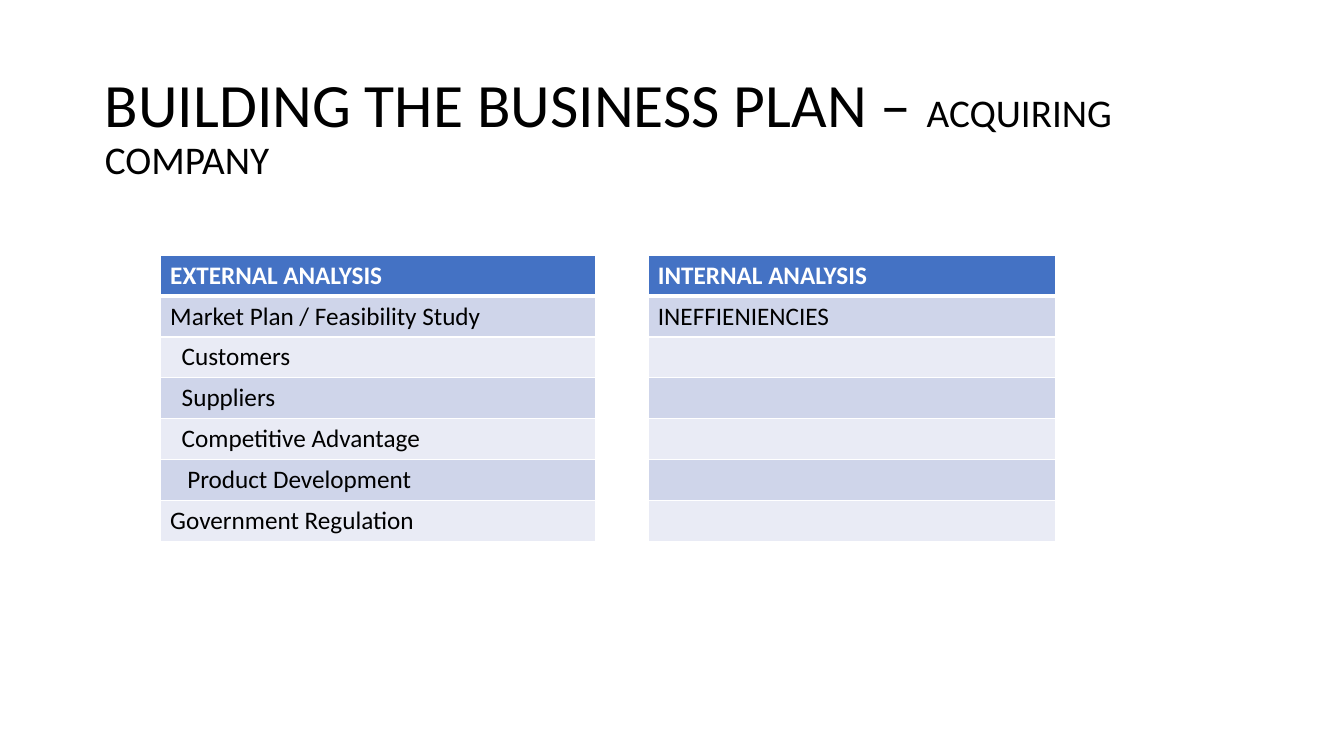
from dataclasses import dataclass

from lxml import etree
from pptx import Presentation
from pptx.dml.color import RGBColor
from pptx.enum.text import MSO_ANCHOR, MSO_AUTO_SIZE, PP_ALIGN
from pptx.oxml.ns import qn
from pptx.util import Cm, Pt

LEFT = PP_ALIGN.LEFT
BOTTOM = MSO_ANCHOR.BOTTOM
NO_AUTOFIT = MSO_AUTO_SIZE.NONE

TITLE_ONLY = 5
FONT = "Calibri"
COLORS = {
    "black": "000000",
    "white": "FFFFFF",
    "header": "4472C4",
    "odd": "CFD5EA",
    "even": "E9EBF5",
}
COLUMN_WIDTHS = (10.97, 1.32, 10.26)
ROW_HEIGHT = 1.03
CELL_MARGIN = 0.25


@dataclass(frozen=True)
class AnalysisRow:
    external: str
    internal: str = ""
    indent: float = 0


ROWS = (
    AnalysisRow("EXTERNAL ANALYSIS", "INTERNAL ANALYSIS"),
    AnalysisRow("Market Plan / Feasibility Study", "INEFFIENIENCIES"),
    AnalysisRow("Customers", indent=0.29),
    AnalysisRow("Suppliers", indent=0.29),
    AnalysisRow("Competitive Advantage", indent=0.29),
    AnalysisRow("Product Development", indent=0.43),
    AnalysisRow("Government Regulation"),
)


def add_text(para, text: str, *, size: float, color: str = "black", bold: bool = False) -> None:
    span = para.add_run()
    span.text = text
    span.font.name = FONT
    span.font.size = Pt(size)
    span.font.bold = bold
    span.font.color.rgb = RGBColor.from_string(COLORS[color])


def add_borders(cell, widths: dict[str, float]) -> None:
    properties = cell._tc.get_or_add_tcPr()
    for side, width in widths.items():
        line = etree.SubElement(properties, qn(f"a:ln{side}"), w=str(Pt(width)))
        fill = etree.SubElement(line, qn("a:solidFill"))
        etree.SubElement(fill, qn("a:srgbClr"), val=COLORS["white"])


def add_title(page) -> None:
    title = page.shapes.title
    title.left, title.top, title.width, title.height = Cm(2.39), Cm(0.71), Cm(27.94), Cm(4.04)
    frame = title.text_frame
    frame.word_wrap = True
    frame.auto_size = NO_AUTOFIT
    frame.vertical_anchor = BOTTOM
    para = frame.paragraphs[0]
    para.alignment = LEFT
    para.line_spacing = 0.9
    add_text(para, "BUILDING THE BUSINESS PLAN – ", size=44)
    add_text(para, "ACQUIRING COMPANY", size=28)


def format_cell(cell, text: str, row_index: int, indent: float, is_gap: bool) -> None:
    is_header = row_index == 0
    add_borders(cell, {
        "L": 1,
        "R": 1,
        "T": 3 if row_index == 1 else 1,
        "B": 3 if is_header else 1,
    })
    if is_gap:
        cell.fill.background()
    else:
        band = "header" if is_header else "odd" if row_index % 2 else "even"
        cell.fill.solid()
        cell.fill.fore_color.rgb = RGBColor.from_string(COLORS[band])
    cell.margin_left = Cm(CELL_MARGIN + indent)
    if text:
        color = "white" if is_header else "black"
        add_text(cell.text_frame.paragraphs[0], text, size=18, color=color, bold=is_header)


def add_analysis_table(page) -> None:
    table = page.shapes.add_table(
        len(ROWS), len(COLUMN_WIDTHS), Cm(4.04), Cm(6.43),
        Cm(sum(COLUMN_WIDTHS)), Cm(ROW_HEIGHT * len(ROWS)),
    ).table
    for column, width in zip(table.columns, COLUMN_WIDTHS):
        column.width = Cm(width)
    for row_index, row in enumerate(ROWS):
        table.rows[row_index].height = Cm(ROW_HEIGHT)
        # The middle column is an unfilled gap between the two lists
        for column_index, text in enumerate((row.external, "", row.internal)):
            indent = row.indent if column_index == 0 else 0
            format_cell(table.cell(row_index, column_index), text, row_index,
                        indent, is_gap=column_index == 1)


def main() -> None:
    deck = Presentation()
    deck.slide_width, deck.slide_height = Cm(33.87), Cm(19.05)
    page = deck.slides.add_slide(deck.slide_layouts[TITLE_ONLY])
    add_title(page)
    add_analysis_table(page)
    deck.save("out.pptx")


if __name__ == "__main__":
    main()
